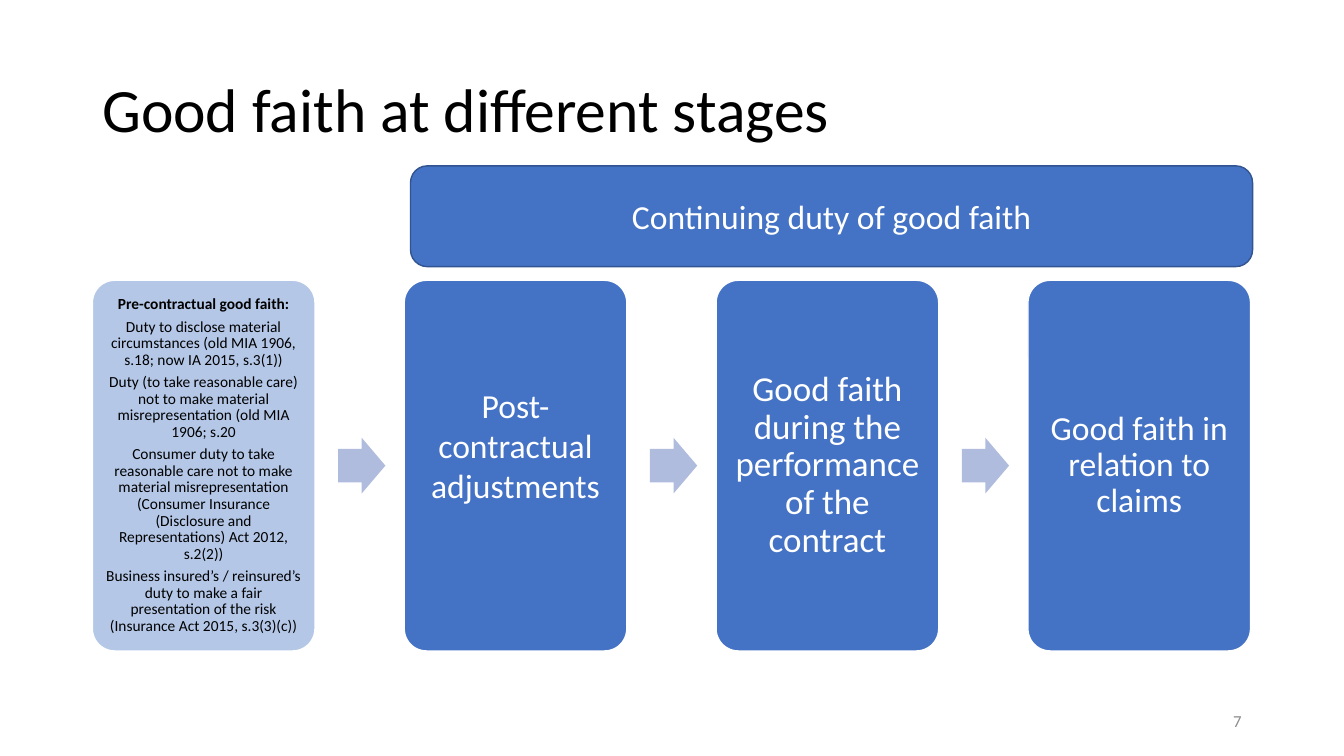
from dataclasses import dataclass

from pptx import Presentation
from pptx.dml.color import RGBColor
from pptx.enum.shapes import MSO_SHAPE
from pptx.enum.text import MSO_ANCHOR, PP_ALIGN
from pptx.shapes.autoshape import Shape
from pptx.slide import Slide
from pptx.util import Emu, Pt

EMU_PER_PX = 9525
FONT = "Calibri"
BLACK, WHITE, GREY = "000000", "FFFFFF", "8C8C8C"
BLUE, DARK_BLUE, PALE_BLUE, ARROW_BLUE = "4472C4", "325491", "B4C7E7", "B0BCDE"

CARD_LEFT, CARD_TOP, CARD_WIDTH, CARD_HEIGHT, CARD_PITCH = 88, 267, 212, 353, 297
ARROW_OFFSET, ARROW_WIDTH, ARROW_HEIGHT = 234, 45, 53


@dataclass(frozen=True)
class Box:
    left: int
    top: int
    width: int
    height: int


@dataclass(frozen=True)
class TextStyle:
    size: int
    color: str
    align: PP_ALIGN = PP_ALIGN.CENTER
    line_spacing: float = 1.0
    space_after: int = 0


@dataclass(frozen=True)
class Stage:
    paragraphs: tuple[str, ...]
    style: TextStyle
    fill: str = BLUE
    inset: int = 10
    bottom_inset: int = 10
    bold_heading: bool = False


STAGES = (
    Stage(
        (
            "Pre-contractual good faith:",
            "Duty to disclose material circumstances (old MIA 1906, s.18; now IA 2015, s.3(1))",
            "Duty (to take reasonable care) not to make material misrepresentation (old MIA 1906; s.20",
            "Consumer duty to take reasonable care not to make material misrepresentation "
            "(Consumer Insurance (Disclosure and Representations) Act 2012, s.2(2))",
            "Business insured’s / reinsured’s duty to make a fair presentation of the risk "
            "(Insurance Act 2015, s.3(3)(c))",
        ),
        TextStyle(11, BLACK, line_spacing=0.9, space_after=4),
        fill=PALE_BLUE,
        inset=5,
        bottom_inset=5,
        bold_heading=True,
    ),
    Stage(("Post-contractual adjustments",), TextStyle(24, WHITE), bottom_inset=49),
    Stage(
        ("Good faith during the performance of the contract",),
        TextStyle(25, WHITE, line_spacing=0.9),
    ),
    Stage(("Good faith in relation to claims",), TextStyle(24, WHITE, line_spacing=0.9)),
)


def px(length: int) -> Emu:
    """Convert whole pixels to EMU."""
    return Emu(length * EMU_PER_PX)


def rgb(color: str) -> RGBColor:
    """Turn a hex string into a colour."""
    return RGBColor.from_string(color)


def write_text(shape: Shape, paragraphs: tuple[str, ...], style: TextStyle) -> None:
    """Fill a shape with vertically centred, wrapped paragraphs."""
    frame = shape.text_frame
    frame.word_wrap = True
    frame.vertical_anchor = MSO_ANCHOR.MIDDLE
    frame.text = "\n".join(paragraphs)
    for paragraph in frame.paragraphs:
        paragraph.alignment = style.align
        paragraph.line_spacing = style.line_spacing
        paragraph.space_after = Pt(style.space_after)
        paragraph.font.name = FONT
        paragraph.font.size = Pt(style.size)
        paragraph.font.color.rgb = rgb(style.color)


def add_label(slide: Slide, box: Box, text: str, style: TextStyle) -> None:
    """Add a plain text box."""
    shape = slide.shapes.add_textbox(px(box.left), px(box.top), px(box.width), px(box.height))
    write_text(shape, (text,), style)


def add_block(
    slide: Slide, kind: MSO_SHAPE, box: Box, fill: str, line: str | None = None
) -> Shape:
    """Add a flat preset shape with an optional outline."""
    shape = slide.shapes.add_shape(
        kind, px(box.left), px(box.top), px(box.width), px(box.height)
    )
    shape.shadow.inherit = False
    shape.fill.solid()
    shape.fill.fore_color.rgb = rgb(fill)
    if line is None:
        shape.line.fill.background()
    else:
        shape.line.color.rgb = rgb(line)
        shape.line.width = Pt(1)
    return shape


def add_stage(slide: Slide, stage: Stage, left: int) -> None:
    """Add one stage card with its text."""
    box = Box(left, CARD_TOP, CARD_WIDTH, CARD_HEIGHT)
    card = add_block(slide, MSO_SHAPE.ROUNDED_RECTANGLE, box, stage.fill, WHITE)
    card.adjustments[0] = 0.1
    write_text(card, stage.paragraphs, stage.style)
    frame = card.text_frame
    frame.margin_left = frame.margin_right = frame.margin_top = px(stage.inset)
    frame.margin_bottom = px(stage.bottom_inset)
    frame.paragraphs[0].font.bold = stage.bold_heading


def add_arrow(slide: Slide, left: int) -> None:
    """Add an arrow centred on the height of the cards."""
    top = CARD_TOP + (CARD_HEIGHT - ARROW_HEIGHT) // 2
    box = Box(left, top, ARROW_WIDTH, ARROW_HEIGHT)
    arrow = add_block(slide, MSO_SHAPE.RIGHT_ARROW, box, ARROW_BLUE)
    arrow.adjustments[0] = 0.6
    arrow.adjustments[1] = 0.5


def main() -> None:
    """Build and save the slide."""
    presentation = Presentation()
    presentation.slide_width, presentation.slide_height = px(1280), px(720)
    slide = presentation.slides.add_slide(presentation.slide_layouts[6])

    add_label(
        slide,
        Box(88, 38, 1104, 139),
        "Good faith at different stages",
        TextStyle(44, BLACK, PP_ALIGN.LEFT, 0.9),
    )
    for index, stage in enumerate(STAGES):
        left = CARD_LEFT + index * CARD_PITCH
        add_stage(slide, stage, left)
        if index < len(STAGES) - 1:
            add_arrow(slide, left + ARROW_OFFSET)
    add_label(slide, Box(904, 667, 288, 38), "7", TextStyle(12, GREY, PP_ALIGN.RIGHT))
    banner = add_block(
        slide, MSO_SHAPE.ROUNDED_RECTANGLE, Box(391, 158, 802, 96), BLUE, DARK_BLUE
    )
    write_text(banner, ("Continuing duty of good faith",), TextStyle(24, WHITE))

    presentation.save("out.pptx")


if __name__ == "__main__":
    main()
